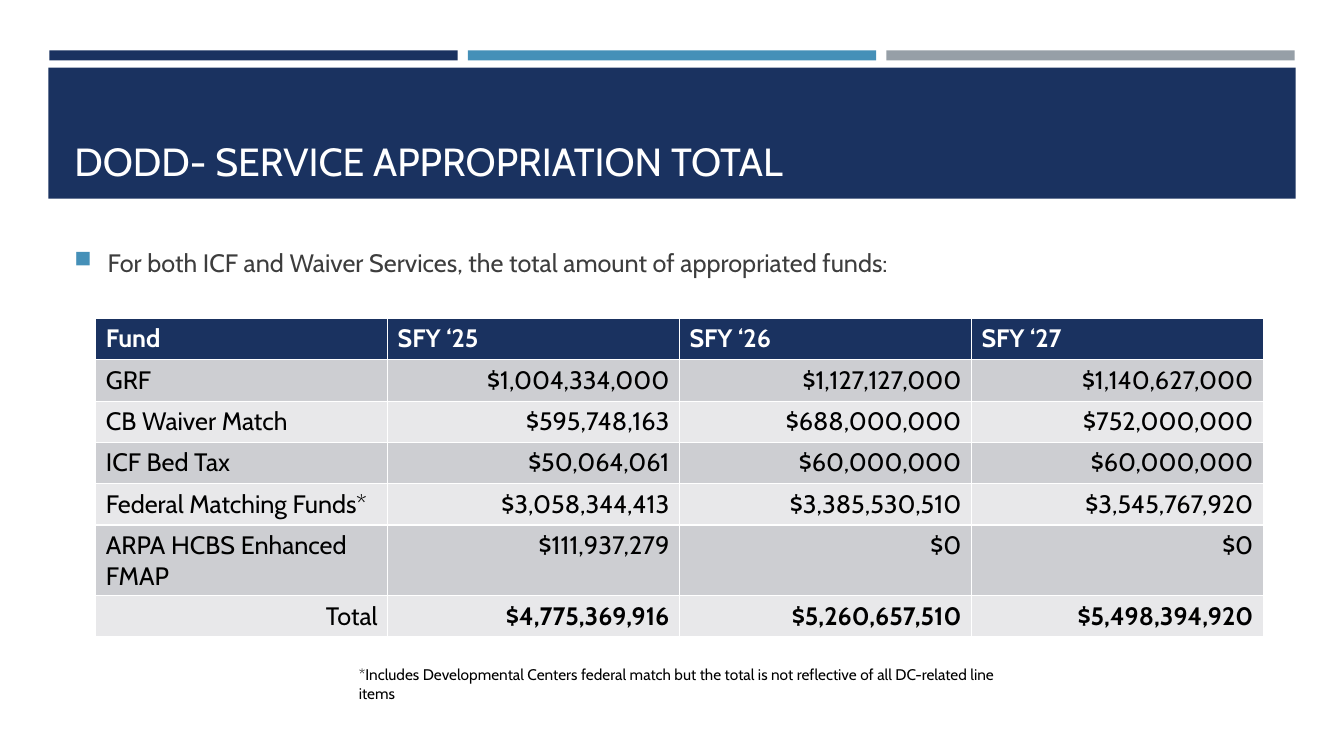
from pptx import Presentation
from pptx.dml.color import RGBColor
from pptx.enum.shapes import MSO_SHAPE
from pptx.enum.text import MSO_ANCHOR, PP_ALIGN
from pptx.oxml import parse_xml
from pptx.oxml.ns import nsdecls
from pptx.util import Inches, Pt

RECT = MSO_SHAPE.RECTANGLE
TOP, MID, BASE = MSO_ANCHOR.TOP, MSO_ANCHOR.MIDDLE, MSO_ANCHOR.BOTTOM
LEFT, RIGHT = PP_ALIGN.LEFT, PP_ALIGN.RIGHT

FONT = "Cabin"
NAVY, BLUE, GRAY = "1A3260", "4590B8", "969FA7"
WHITE, BLACK, INK = "FFFFFF", "000000", "3D3D3D"
BANDS = ["CDCED2", "E8E8EA"]

TITLE = "DODD- SERVICE APPROPRIATION TOTAL"
LEAD = "For both ICF and Waiver Services, the total amount of appropriated funds:"
NOTE = ("*Includes Developmental Centers federal match but the total is not "
        "reflective of all DC-related line items")
ROWS = [
    ("Fund", "SFY ‘25", "SFY ‘26", "SFY ‘27"),
    ("GRF", "$1,004,334,000", "$1,127,127,000", "$1,140,627,000"),
    ("CB Waiver Match", "$595,748,163", "$688,000,000", "$752,000,000"),
    ("ICF Bed Tax", "$50,064,061", "$60,000,000", "$60,000,000"),
    ("Federal Matching Funds*", "$3,058,344,413", "$3,385,530,510", "$3,545,767,920"),
    ("ARPA HCBS Enhanced FMAP", "$111,937,279", "$0", "$0"),
    ("Total", "$4,775,369,916", "$5,260,657,510", "$5,498,394,920"),
]
STRIPES = [NAVY, BLUE, GRAY]
EDGE, STRIPE, GAP = 0.49, 4.05, 0.1
TABLE = (0.95, 3.16, 11.58, 2.87)


def paint(fill, color):
    """Fill with one solid colour."""
    fill.solid()
    fill.fore_color.rgb = RGBColor.from_string(color)


def block(slide, box, color):
    """Draw a plain filled rectangle."""
    shape = slide.shapes.add_shape(RECT, *map(Inches, box))
    shape.shadow.inherit = False
    shape.line.fill.background()
    paint(shape.fill, color)


def write(frame, text, size, color, bold=False, align=LEFT):
    """Put one styled line of text into a frame and return its paragraph."""
    para = frame.paragraphs[0]
    para.text = text
    para.alignment = align
    font = para.font
    font.name, font.size, font.bold = FONT, Pt(size), bold
    font.color.rgb = RGBColor.from_string(color)
    return para


def label(slide, box, text, size, color, anchor):
    """Add a wrapped text box and return its paragraph."""
    frame = slide.shapes.add_textbox(*map(Inches, box)).text_frame
    frame.word_wrap = True
    frame.vertical_anchor = anchor
    return write(frame, text, size, color)


def bullet(para, color):
    """Give a paragraph a square bullet with a hanging indent."""
    props = para._p.get_or_add_pPr()
    indent = Inches(0.33)
    props.set("marL", str(indent))
    props.set("indent", str(-indent))
    ns = nsdecls("a")
    for xml in (f'<a:buClr {ns}><a:srgbClr val="{color}"/></a:buClr>',
                f'<a:buSzPct {ns} val="92000"/>',
                f'<a:buChar {ns} char="■"/>'):
        props.append(parse_xml(xml))


def grid(slide):
    """Add the table of funds by fiscal year."""
    table = slide.shapes.add_table(len(ROWS), len(ROWS[0]), *map(Inches, TABLE)).table
    last = len(ROWS) - 1
    for r, row in enumerate(ROWS):
        head = r == 0
        for c, text in enumerate(row):
            cell = table.cell(r, c)
            paint(cell.fill, NAVY if head else BANDS[(r - 1) % 2])
            bold = head or (r == last and c > 0)
            right = not head and (c > 0 or r == last)
            write(cell.text_frame, text, 18, WHITE if head else BLACK,
                  bold, RIGHT if right else LEFT)


def main():
    """Build the slide and save it."""
    deck = Presentation()
    deck.slide_width, deck.slide_height = Inches(13.33), Inches(7.5)
    slide = deck.slides.add_slide(deck.slide_layouts[6])
    for i, color in enumerate(STRIPES):
        block(slide, (EDGE + i * (STRIPE + GAP), 0.5, STRIPE, 0.1), color)
    block(slide, (0.48, 0.67, 12.37, 1.3), NAVY)
    label(slide, (0.64, 0.77, 12.06, 1.11), TITLE, 28, WHITE, BASE)
    bullet(label(slide, (0.64, 2.38, 12.06, 0.44), LEAD, 18, INK, MID), BLUE)
    grid(slide)
    label(slide, (3.46, 6.55, 6.81, 0.45), NOTE, 11, BLACK, TOP)
    deck.save("out.pptx")


if __name__ == "__main__":
    main()
